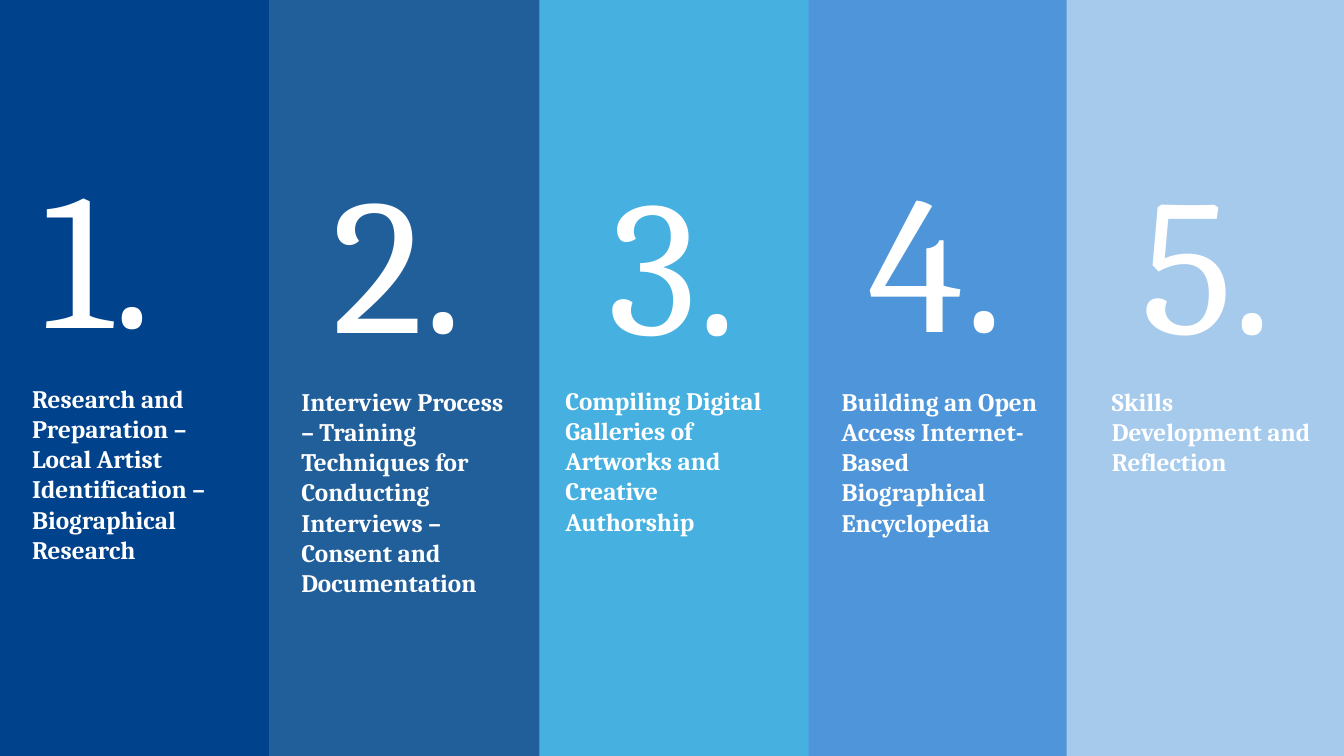
from pptx import Presentation
from pptx.dml.color import RGBColor
from pptx.enum.shapes import MSO_SHAPE
from pptx.enum.text import MSO_AUTO_SIZE
from pptx.util import Inches, Pt

COLORS = {
    "navy": "00428B",
    "steel": "215F9A",
    "cyan": "46B1E1",
    "blue": "4E95D9",
    "pale": "A6CAEC",
    "white": "FFFFFF",
}
NUMBER_FORMAT = {"size": Pt(138), "bold": False}
LABEL_FORMAT = {"size": Pt(18), "bold": True}
SLIDE_WIDTH, SLIDE_HEIGHT = 13.33, 7.5
BAND_WIDTH = 2.88
NUMBER_SIZE = (1.9, 2.42)
LABEL_WIDTH = 2.27

STEPS = [
    (None, (0.32, 1.29), (0.22, 3.75), 1.92,
     "Research and Preparation – Local Artist Identification – Biographical Research"),
    (("steel", 2.67), (3.2, 1.34), (2.89, 3.78), 2.52,
     "Interview Process – Training Techniques for Conducting Interviews – "
     "Consent and Documentation"),
    (("cyan", 5.35), (5.94, 1.36), (5.51, 3.77), 1.92,
     "Compiling Digital Galleries of Artworks and Creative Authorship"),
    (("blue", 8.02), (8.52, 1.33), (8.25, 3.78), 1.62,
     "Building an Open Access Internet-Based Biographical Encyclopedia"),
    (("pale", 10.58), (11.22, 1.35), (10.93, 3.78), 1.01,
     "Skills Development and Reflection"),
]


class StepSlide:
    """Holds the font and the current slide, and draws its elements."""

    def __init__(self, deck, font_name, background):
        self.font_name = font_name
        self.page = deck.slides.add_slide(deck.slide_layouts[6])
        self.paint(self.page.background.fill, background)

    def paint(self, fill, color):
        fill.solid()
        fill.fore_color.rgb = RGBColor.from_string(COLORS[color])

    def band(self, group, color, left):
        width = min(BAND_WIDTH, SLIDE_WIDTH - left)
        box = group.shapes.add_shape(
            MSO_SHAPE.RECTANGLE, Inches(left), 0, Inches(width), Inches(SLIDE_HEIGHT))
        box.shadow.inherit = False
        box.line.fill.background()
        self.paint(box.fill, color)

    def text(self, group, words, position, size, font_format):
        box = group.shapes.add_textbox(*map(Inches, position + size))
        frame = box.text_frame
        frame.word_wrap = True
        frame.auto_size = MSO_AUTO_SIZE.SHAPE_TO_FIT_TEXT
        span = frame.paragraphs[0].add_run()
        span.text = words
        for name, value in {"name": self.font_name, **font_format}.items():
            setattr(span.font, name, value)
        span.font.color.rgb = RGBColor.from_string(COLORS["white"])

    def step(self, number, band, number_at, label_at, label_height, label):
        group = self.page.shapes.add_group_shape()
        if band:
            self.band(group, *band)
        self.text(group, f"{number}.", number_at, NUMBER_SIZE, NUMBER_FORMAT)
        self.text(group, label, label_at, (LABEL_WIDTH, label_height), LABEL_FORMAT)


def main():
    deck = Presentation()
    deck.slide_width = Inches(SLIDE_WIDTH)
    deck.slide_height = Inches(SLIDE_HEIGHT)
    slide = StepSlide(deck, "Cambria", "navy")
    for number, step in enumerate(STEPS, start=1):
        slide.step(number, *step)
    deck.save("out.pptx")


if __name__ == "__main__":
    main()
